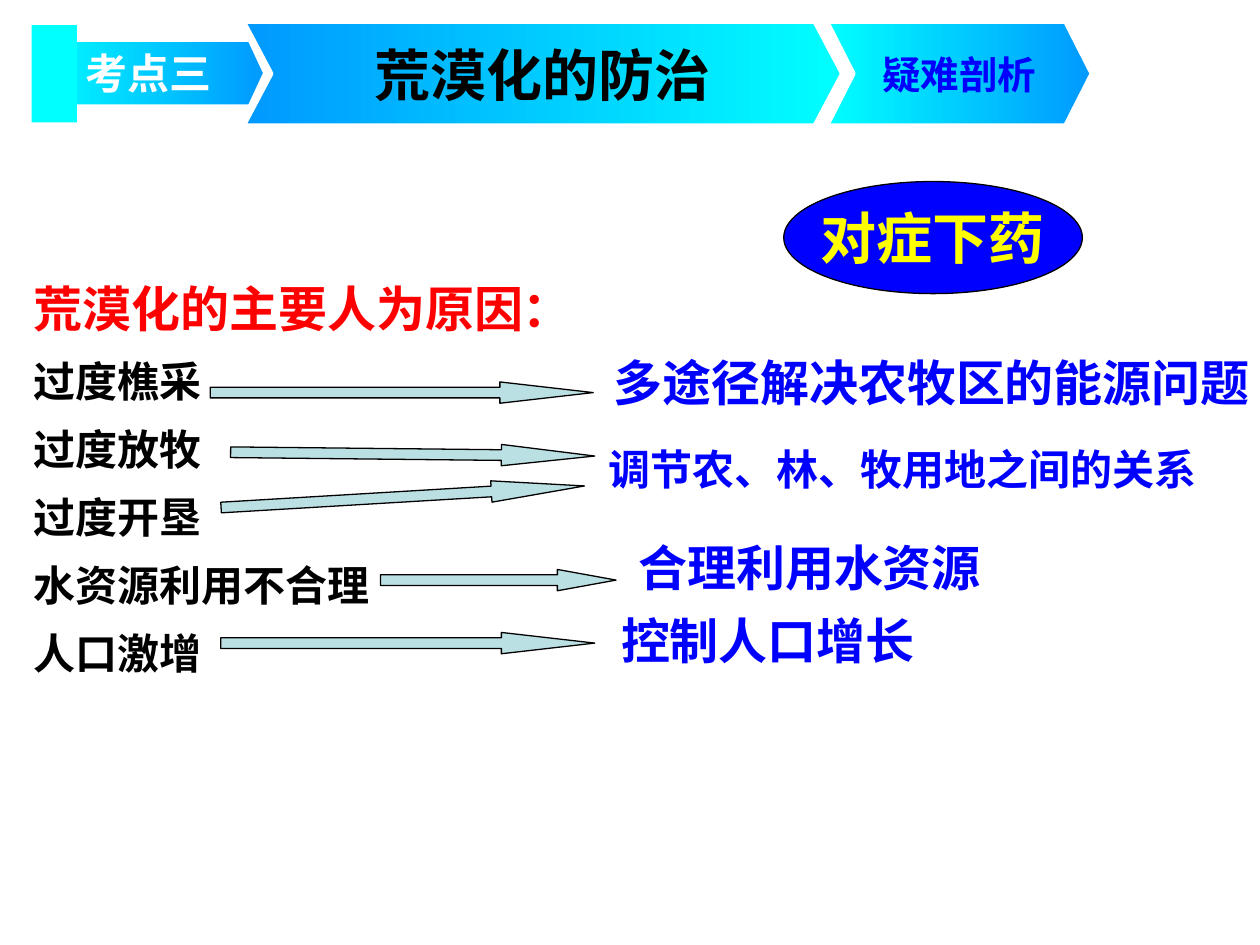
from pptx import Presentation
from pptx.dml.color import RGBColor
from pptx.enum.shapes import MSO_SHAPE as Preset
from pptx.enum.text import MSO_ANCHOR as Anchor, MSO_AUTO_SIZE as AutoSize, PP_ALIGN as Align
from pptx.oxml.ns import qn
from pptx.util import Cm, Pt

BLACK = RGBColor(0x00, 0x00, 0x00)
WHITE = RGBColor(0xFF, 0xFF, 0xFF)
RED = RGBColor(0xFF, 0x00, 0x00)
BLUE = RGBColor(0x00, 0x00, 0xFF)
YELLOW = RGBColor(0xFF, 0xFF, 0x00)
CYAN = RGBColor(0x00, 0xFF, 0xFF)
SKY = RGBColor(0x00, 0x99, 0xFF)
PALE = RGBColor(0xBB, 0xE0, 0xE3)

CJK_FONT = "Noto Sans CJK SC"
BODY_FONT = "Roboto"
TITLE_FONT = "Times New Roman"

CAUSES = ["过度樵采", "过度放牧", "过度开垦", "水资源利用不合理", "人口激增"]

# left, top, width, rotation, head length as a share of the arrow's height
ARROWS = [
    (4.24, 7.7, 7.72, 0, 4.375),
    (4.65, 8.94, 7.34, 0.6, 4.375),
    (4.45, 9.8, 7.34, -3.4, 4.375),
    (7.67, 11.48, 4.75, 0, 2.75),
    (4.45, 12.75, 7.54, 0, 4.375),
]

# text, left, top, width, height, size, wrap
REMEDIES = [
    ("多途径解决农牧区的能源问题", 12.12, 6.98, 13.72, 1.45, 28, True),
    ("调节农、林、牧用地之间的关系", 12.01, 8.81, 14.02, 1.27, 24, True),
    ("合理利用水资源", 12.62, 10.72, 7.47, 1.45, 28, False),
    ("控制人口增长", 12.27, 12.19, 6.48, 1.45, 28, False),
]


def format_para(para, size, font, color):
    for span in para.runs:
        span.font.size = Pt(size)
        span.font.bold = True
        span.font.name = font
        span.font.color.rgb = color
        east_asian = span.font._element.makeelement(qn("a:ea"), {"typeface": CJK_FONT})
        span.font._element.find(qn("a:latin")).addnext(east_asian)


def add_text(page, lines, left, top, width, height, wrap):
    box = page.shapes.add_textbox(Cm(left), Cm(top), Cm(width), Cm(height))
    frame = box.text_frame
    frame.text = "\n".join(lines)
    frame.word_wrap = wrap
    frame.auto_size = AutoSize.SHAPE_TO_FIT_TEXT
    return frame.paragraphs


def add_shape(page, preset, left, top, width, height, fill, line=None, weight=0.75):
    shape = page.shapes.add_shape(preset, Cm(left), Cm(top), Cm(width), Cm(height))
    shape.shadow.inherit = False
    shape.fill.solid()
    shape.fill.fore_color.rgb = fill
    if line is None:
        shape.line.fill.background()
    else:
        shape.line.color.rgb = line
        shape.line.width = Pt(weight)
    return shape


def add_label(shape, text, size, font, color, wrap=True):
    frame = shape.text_frame
    frame.text = text
    frame.word_wrap = wrap
    frame.vertical_anchor = Anchor.MIDDLE
    para = frame.paragraphs[0]
    para.alignment = Align.CENTER
    format_para(para, size, font, color)


def add_chevron(page, left, top, width, height, notch, colors):
    """Add a white-edged chevron shaded from left to right."""
    shape = add_shape(page, Preset.CHEVRON, left, top, width, height, CYAN, WHITE, 3)
    shape.adjustments[0] = notch
    shape.fill.gradient()
    shape.fill.gradient_angle = 0
    for stop, position, color in zip(shape.fill.gradient_stops, (0, 1), colors):
        stop.position = position
        stop.color.rgb = color
    return shape


def add_arrow(page, left, top, width, rotation, head):
    arrow = add_shape(page, Preset.RIGHT_ARROW, left, top, width, 0.43, PALE, BLACK)
    arrow.adjustments[0] = 0.5
    arrow.adjustments[1] = head
    arrow.rotation = rotation


def add_causes(page):
    lines = ["荒漠化的主要人为原因：", *CAUSES]
    paras = add_text(page, lines, 0.43, 5.08, 11.43, 8.71, False)
    for index, para in enumerate(paras):
        para.line_spacing = 1.35
        size, color = (24, BLACK) if index else (28, RED)
        format_para(para, size, BODY_FONT, color)


def add_banner(page):
    title = add_chevron(page, 4.9, 0.43, 12.09, 2.11, 0.265, (SKY, CYAN))
    add_label(title, "荒漠化的防治", 32, TITLE_FONT, BLACK)
    topic = add_chevron(page, 0.64, 0.79, 4.72, 1.37, 0.232, (CYAN, SKY))
    add_label(topic, "考点三", 24, CJK_FONT, WHITE)
    add_shape(page, Preset.RECTANGLE, 0.64, 0.51, 0.91, 1.96, CYAN)
    analysis = add_chevron(page, 16.66, 0.43, 5.36, 2.11, 0.254, (CYAN, SKY))
    add_label(analysis, "疑难剖析", 22, "Arial", BLUE)


def main():
    deck = Presentation()
    deck.slide_width, deck.slide_height = Cm(25.4), Cm(19.05)
    page = deck.slides.add_slide(deck.slide_layouts[6])

    add_causes(page)
    for arrow in ARROWS:
        add_arrow(page, *arrow)
    for text, left, top, width, height, size, wrap in REMEDIES:
        paras = add_text(page, [text], left, top, width, height, wrap)
        format_para(paras[0], size, BODY_FONT, BLUE)
    remedy = add_shape(page, Preset.OVAL, 15.8, 3.66, 6.02, 2.26, BLUE, BLACK)
    add_label(remedy, "对症下药", 32, TITLE_FONT, YELLOW, wrap=False)
    add_banner(page)

    deck.save("out.pptx")


if __name__ == "__main__":
    main()
